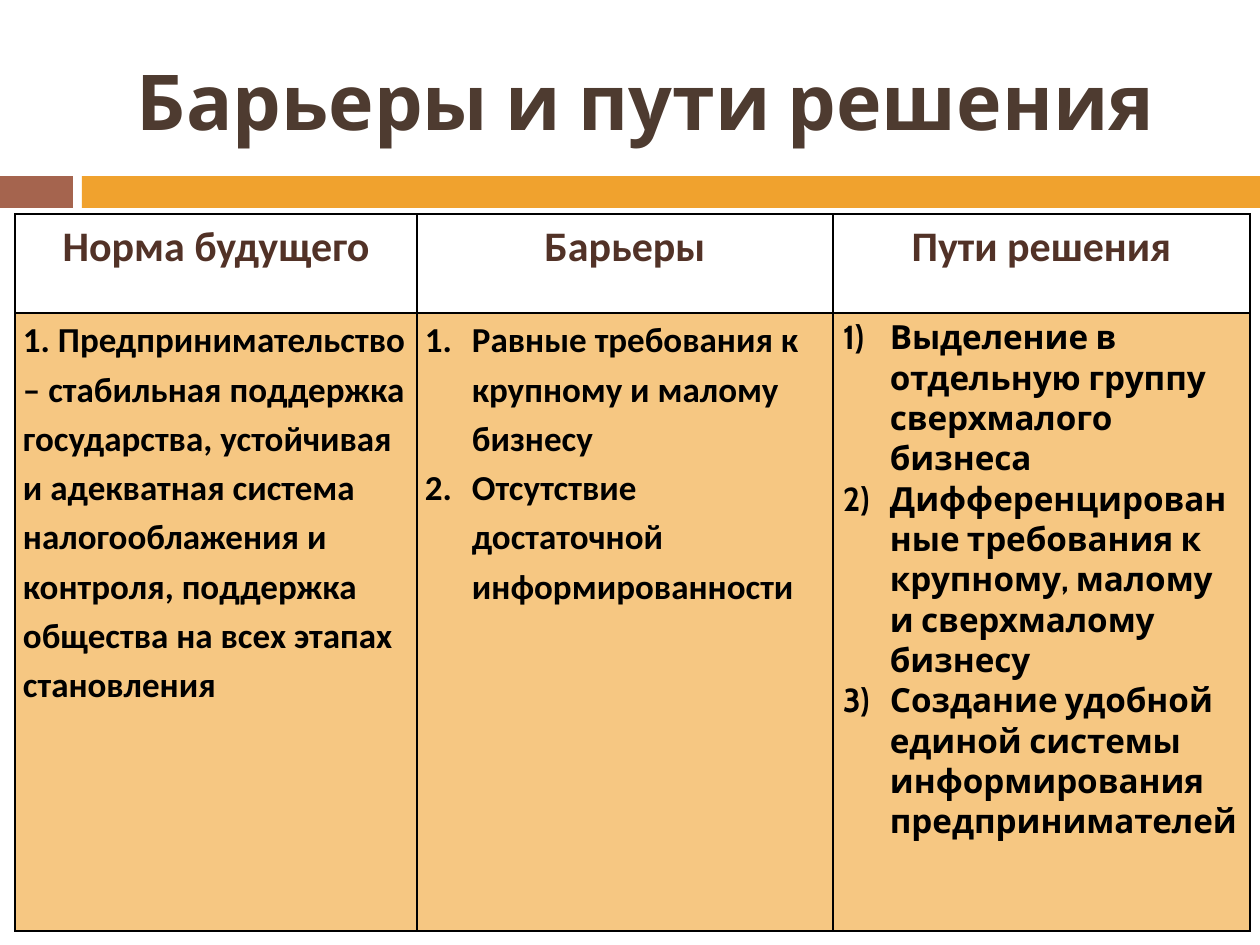
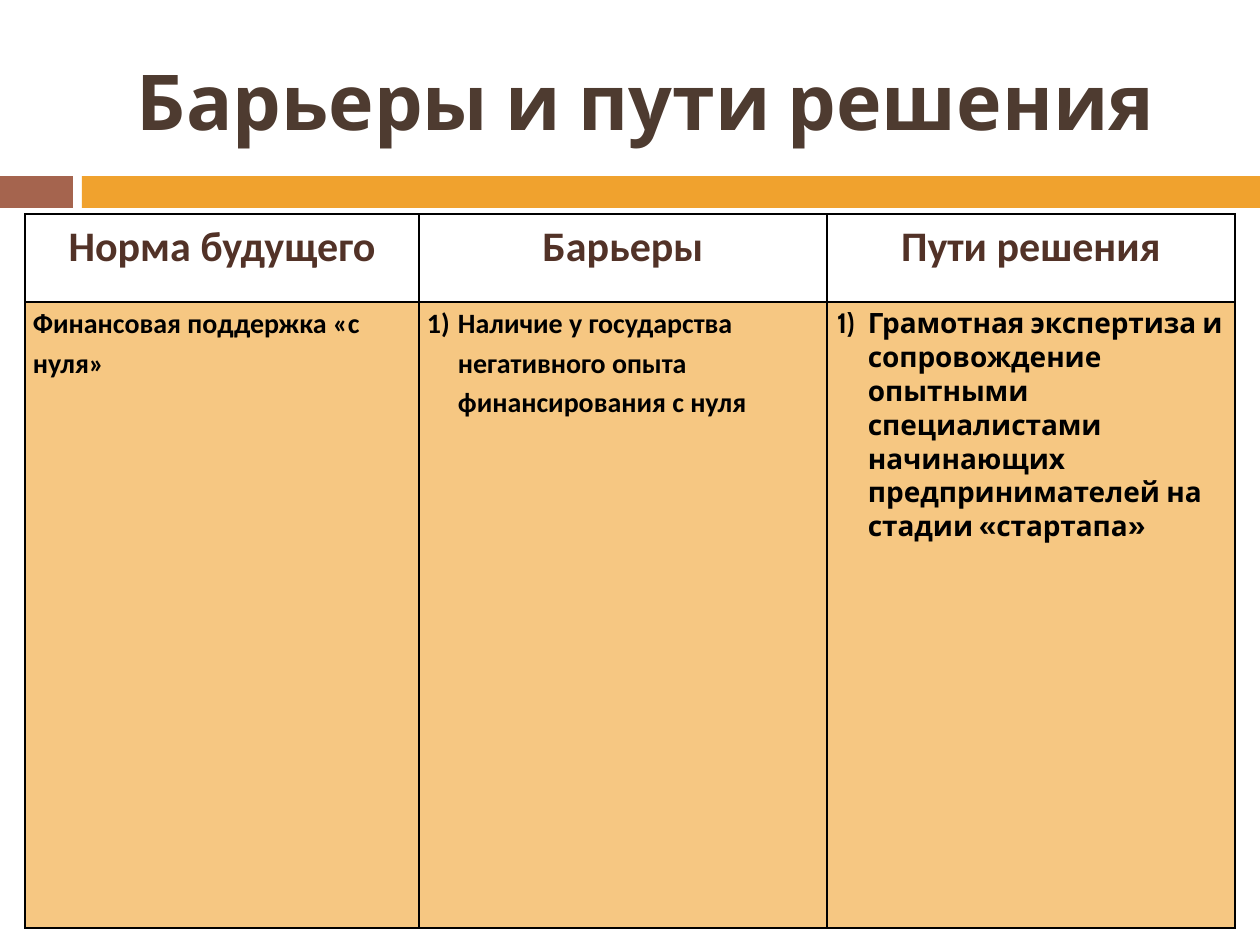
from lxml.etree import SubElement
from pptx import Presentation
from pptx.dml.color import RGBColor
from pptx.enum.shapes import MSO_SHAPE
from pptx.enum.text import MSO_ANCHOR, MSO_AUTO_SIZE, PP_ALIGN
from pptx.oxml.ns import qn
from pptx.util import Emu, Pt

BROWN = RGBColor(0x4E, 0x3B, 0x30)
HEADER_BROWN = RGBColor(0x52, 0x32, 0x27)
BRICK = RGBColor(0xA5, 0x64, 0x4E)
ORANGE = RGBColor(0xF0, 0xA2, 0x2E)
PEACH = RGBColor(0xF6, 0xC7, 0x82)
WHITE = RGBColor(0xFF, 0xFF, 0xFF)
BLACK = RGBColor(0, 0, 0)

TITLE = "Барьеры и пути решения"
HEADERS = ["Норма будущего", "Барьеры", "Пути решения"]
TITLE_BOX = (84, 32, 1124, 136)
BANDS = [((0, 176, 73, 32), BRICK), ((82, 176, 1178, 32), ORANGE)]
TABLE_TOP = 214
TIGHT_MARGINS = (8, 0)
LOOSE_MARGINS = (10, 5)

SLIDES = [
    {
        "left": 15,
        "columns": [402, 416, 417],
        "rows": [99, 618],
        "indent": 47,
        "sizes": [20, 20, 19],
        "numbering": [None, "arabicPeriod", "arabicParenR"],
        "cells": [
            ["1. Предпринимательство – стабильная поддержка государства, устойчивая "
             "и адекватная система налогооблажения и контроля, поддержка общества "
             "на всех этапах становления"],
            ["Равные требования к крупному и малому бизнесу",
             "Отсутствие достаточной информированности"],
            ["Выделение в отдельную группу сверхмалого бизнеса",
             "Дифференцированные требования к крупному, малому и сверхмалому бизнесу",
             "Создание удобной единой системы информирования предпринимателей"],
        ],
    },
    {
        "left": 25,
        "columns": [394, 408, 408],
        "rows": [88, 626],
        "indent": 31,
        "sizes": [16, 16, 16],
        "numbering": [None, "arabicParenR", "arabicParenR"],
        "cells": [
            ["Финансовая поддержка «с нуля»"],
            ["Наличие у государства негативного опыта финансирования с нуля"],
            ["Грамотная экспертиза и сопровождение опытными специалистами "
             "начинающих предпринимателей на стадии «стартапа»"],
        ],
    },
]


def px(length):
    return Emu(round(length * 914400 / 126))


def place(shape, box):
    shape.left, shape.top, shape.width, shape.height = map(px, box)


def write(text_frame, paragraphs, *, size, color, font="Calibri",
          align=PP_ALIGN.LEFT, spacing=1.0, numbering=None, indent=0):
    for index, text in enumerate(paragraphs):
        paragraph = text_frame.add_paragraph() if index else text_frame.paragraphs[0]
        paragraph.alignment = align
        paragraph.line_spacing = spacing
        run = paragraph.add_run()
        run.text = text
        run.font.name = font
        run.font.size = Pt(size)
        run.font.bold = True
        run.font.color.rgb = color
        if numbering:
            properties = paragraph._p.get_or_add_pPr()
            properties.set("marL", str(px(indent)))
            properties.set("indent", str(-px(indent)))
            SubElement(properties, qn("a:buAutoNum"), type=numbering)


def style_cell(cell, color, margins):
    properties = cell._tc.get_or_add_tcPr()
    for side in ("L", "R", "T", "B"):
        line = SubElement(properties, qn(f"a:ln{side}"), w=str(Pt(1)))
        fill = SubElement(line, qn("a:solidFill"))
        SubElement(fill, qn("a:srgbClr"), val=str(BLACK))
    cell.fill.solid()
    cell.fill.fore_color.rgb = color
    cell.margin_left = cell.margin_right = px(margins[0])
    cell.margin_top = cell.margin_bottom = px(margins[1])
    cell.vertical_anchor = MSO_ANCHOR.TOP


def add_frame(slide):
    for box, color in BANDS:
        band = slide.shapes.add_shape(MSO_SHAPE.RECTANGLE, *map(px, box))
        band.shadow.inherit = False
        band.fill.solid()
        band.fill.fore_color.rgb = color
        band.line.fill.background()
    title = slide.shapes.title
    place(title, TITLE_BOX)
    title.text_frame.auto_size = MSO_AUTO_SIZE.NONE
    title.text_frame.vertical_anchor = MSO_ANCHOR.MIDDLE
    write(title.text_frame, [TITLE], size=44, color=BROWN, font="Cabin",
          align=PP_ALIGN.CENTER)


def add_barrier_table(slide, content):
    widths, heights = content["columns"], content["rows"]
    box = (content["left"], TABLE_TOP, sum(widths), sum(heights))
    table = slide.shapes.add_table(2, len(widths), *map(px, box)).table
    table.first_row = table.horz_banding = False
    for row, height in zip(table.rows, heights):
        row.height = px(height)
    for index, width in enumerate(widths):
        table.columns[index].width = px(width)
        header, body = table.cell(0, index), table.cell(1, index)
        is_solution = index == len(widths) - 1
        style_cell(header, WHITE, TIGHT_MARGINS)
        style_cell(body, PEACH, LOOSE_MARGINS if is_solution else TIGHT_MARGINS)
        write(header.text_frame, [HEADERS[index]], size=24, color=HEADER_BROWN,
              align=PP_ALIGN.CENTER, spacing=1.15)
        write(body.text_frame, content["cells"][index], size=content["sizes"][index],
              color=BLACK, font="Cabin" if is_solution else "Calibri",
              spacing=1.0 if is_solution else 1.15,
              numbering=content["numbering"][index], indent=content["indent"])


def main():
    presentation = Presentation()
    presentation.slide_width, presentation.slide_height = px(1260), px(945)
    title_only = presentation.slide_layouts[5]
    for content in SLIDES:
        slide = presentation.slides.add_slide(title_only)
        add_frame(slide)
        add_barrier_table(slide, content)
    presentation.save("out.pptx")


if __name__ == "__main__":
    main()
